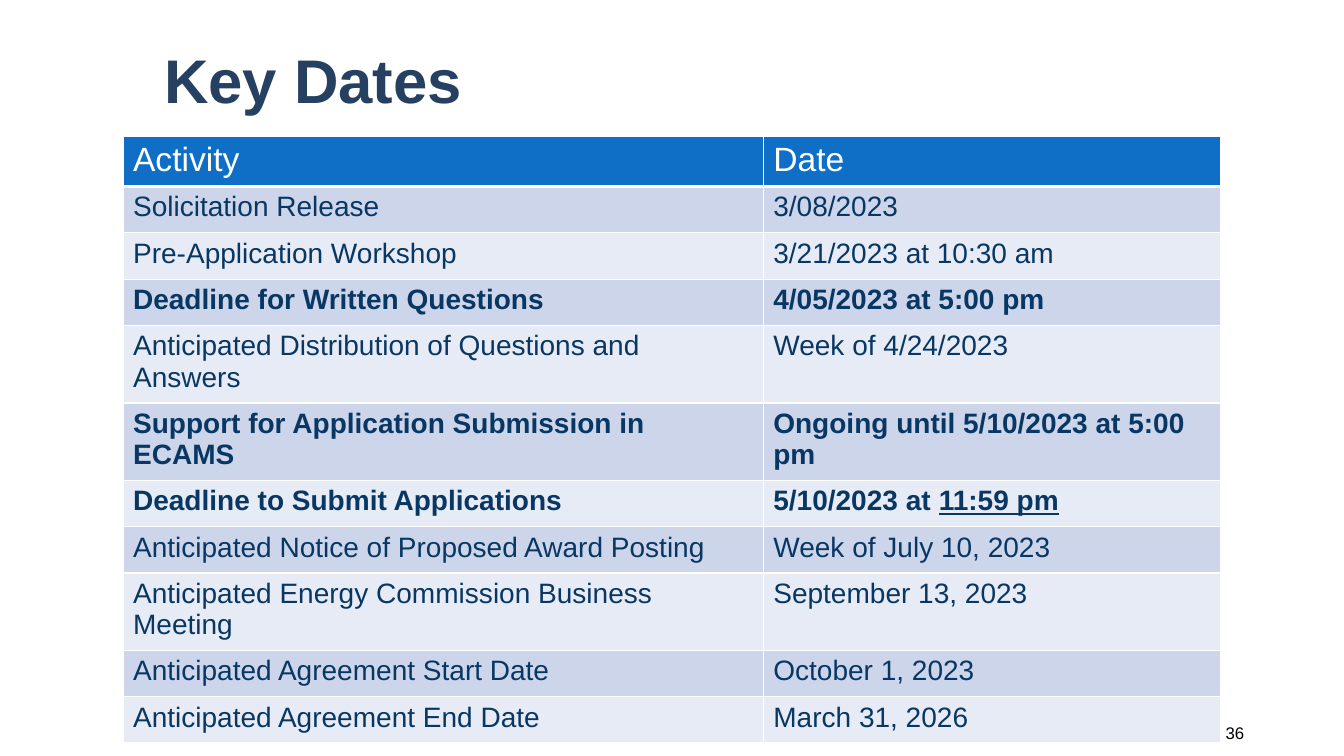
"""Build the Key Dates slide with its schedule table."""
import dataclasses
import typing

import lxml.etree
import pptx
import pptx.dml.color
import pptx.enum.text
import pptx.oxml.ns
import pptx.util


@dataclasses.dataclass(frozen=True)
class Theme:
    font: str = "Arial"
    title: str = "254061"
    header: str = "0F6FC6"
    body: str = "083763"
    bands: tuple[str, str] = ("CCD5EA", "E7EBF5")
    white: str = "FFFFFF"
    black: str = "000000"
    title_size: int = 44
    header_size: int = 24
    body_size: int = 20
    number_size: int = 12


@dataclasses.dataclass(frozen=True)
class Label:
    text: str
    box: tuple[float, float, float, float]
    color: str
    size: int
    bold: bool = False
    align: typing.Any = pptx.enum.text.PP_ALIGN.LEFT
    spacing: float = 1.0


class KeyDate(typing.NamedTuple):
    activity: str
    date: str
    bold: bool = False
    underlined: str = ""


THEME = Theme()
LABELS = (
    Label("Key Dates", (1.53, 0.26, 10.89, 1.14), THEME.title,
          THEME.title_size, bold=True, spacing=0.9),
    Label("36", (10.47, 7.07, 1.97, 0.4), THEME.black, THEME.number_size,
          align=pptx.enum.text.PP_ALIGN.RIGHT),
)
DATES = (
    KeyDate("Activity", "Date"),
    KeyDate("Solicitation Release", "3/08/2023"),
    KeyDate("Pre-Application Workshop", "3/21/2023 at 10:30 am"),
    KeyDate("Deadline for Written Questions", "4/05/2023 at 5:00 pm", True),
    KeyDate("Anticipated Distribution of Questions and Answers",
            "Week of 4/24/2023"),
    KeyDate("Support for Application Submission in ECAMS",
            "Ongoing until 5/10/2023 at 5:00 pm", True),
    KeyDate("Deadline to Submit Applications", "5/10/2023 at ", True,
            "11:59 pm"),
    KeyDate("Anticipated Notice of Proposed Award Posting",
            "Week of July 10, 2023"),
    KeyDate("Anticipated Energy Commission Business Meeting",
            "September 13, 2023"),
    KeyDate("Anticipated Agreement Start Date", "October 1, 2023"),
    KeyDate("Anticipated Agreement End Date", "March 31, 2026"),
)
COLUMN_WIDTHS = (6.35, 4.54)
ROW_HEIGHT = 0.46


def rgb(color: str) -> pptx.dml.color.RGBColor:
    return pptx.dml.color.RGBColor.from_string(color)


def add_run(p: typing.Any, text: str, size: int, color: str,
            bold: bool = False, underline: bool = False) -> None:
    r = p.add_run()
    r.text = text
    formats = {"name": THEME.font, "size": pptx.util.Pt(size),
               "bold": bold, "underline": underline}
    for name, value in formats.items():
        setattr(r.font, name, value)
    r.font.color.rgb = rgb(color)


def add_label(s: typing.Any, label: Label) -> None:
    sp = s.shapes.add_textbox(*map(pptx.util.Inches, label.box))
    tf = sp.text_frame
    tf.word_wrap = True
    tf.vertical_anchor = pptx.enum.text.MSO_ANCHOR.MIDDLE
    p = tf.paragraphs[0]
    p.alignment = label.align
    p.line_spacing = label.spacing
    add_run(p, label.text, label.size, label.color, label.bold)


def add_borders(cell: typing.Any, widths: dict[str, int]) -> None:
    qn = pptx.oxml.ns.qn
    props = cell._tc.get_or_add_tcPr()
    for edge, width in widths.items():
        line = lxml.etree.SubElement(props, qn(f"a:{edge}"),
                                     w=str(pptx.util.Pt(width)))
        fill = lxml.etree.SubElement(line, qn("a:solidFill"))
        lxml.etree.SubElement(fill, qn("a:srgbClr"), val=THEME.white)


def add_dates_table(s: typing.Any) -> None:
    inches = pptx.util.Inches
    table = s.shapes.add_table(
        len(DATES), len(COLUMN_WIDTHS), inches(1.22), inches(1.35),
        inches(sum(COLUMN_WIDTHS)), inches(ROW_HEIGHT * len(DATES))).table
    table.first_row = True
    table.horz_banding = False
    for column, width in zip(table.columns, COLUMN_WIDTHS):
        column.width = inches(width)
    for i, (row, entry) in enumerate(zip(table.rows, DATES)):
        row.height = inches(ROW_HEIGHT)
        header = i == 0
        size = THEME.header_size if header else THEME.body_size
        color = THEME.white if header else THEME.body
        fill = THEME.header if header else THEME.bands[(i - 1) % 2]
        widths = {"lnL": 1, "lnR": 1, "lnT": 3 if i == 1 else 1,
                  "lnB": 3 if header else 1}
        for cell, text in zip(row.cells, (entry.activity, entry.date)):
            add_borders(cell, widths)
            cell.fill.solid()
            cell.fill.fore_color.rgb = rgb(fill)
            add_run(cell.text_frame.paragraphs[0], text, size, color,
                    entry.bold)
        if entry.underlined:
            add_run(row.cells[1].text_frame.paragraphs[0], entry.underlined,
                    size, color, entry.bold, underline=True)


def main() -> None:
    prs = pptx.Presentation()
    prs.slide_width = pptx.util.Inches(13.33)
    prs.slide_height = pptx.util.Inches(7.5)
    s = prs.slides.add_slide(prs.slide_layouts[6])
    title, number = LABELS
    add_label(s, title)
    add_dates_table(s)
    add_label(s, number)
    prs.save("out.pptx")


if __name__ == "__main__":
    main()
